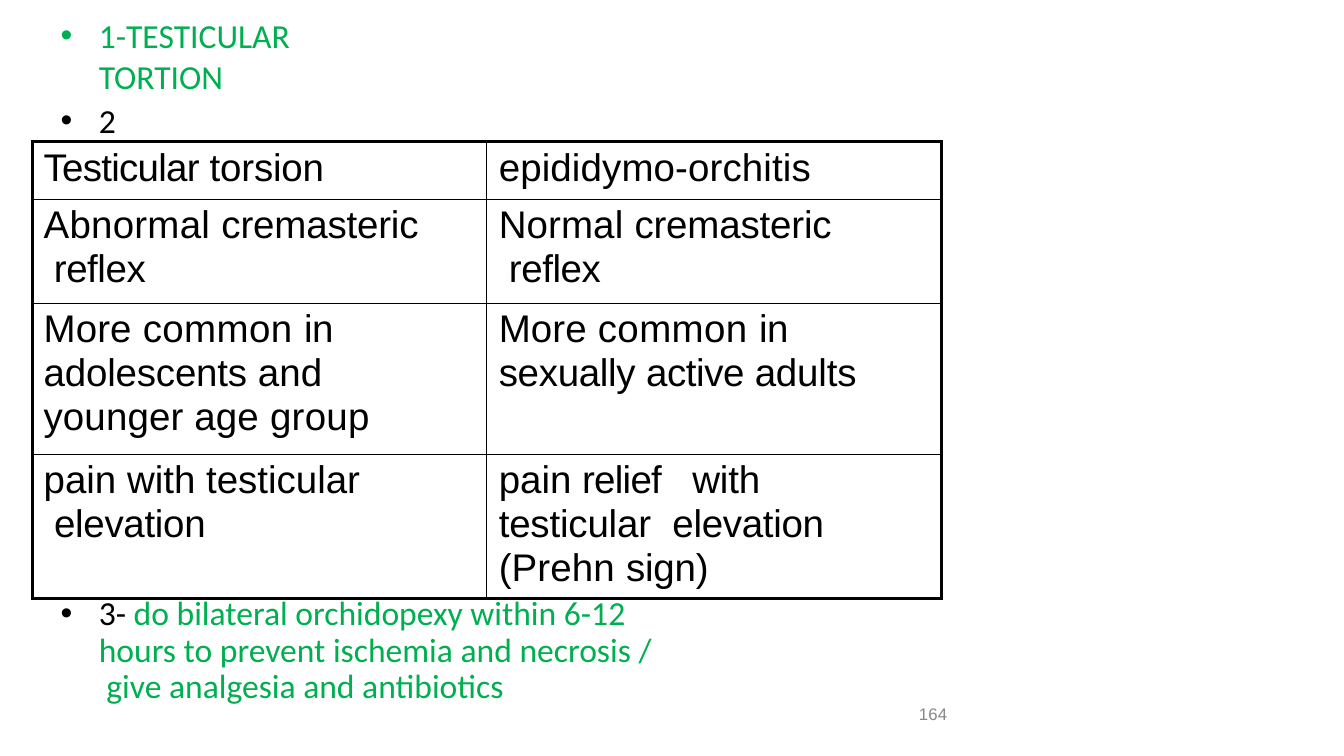
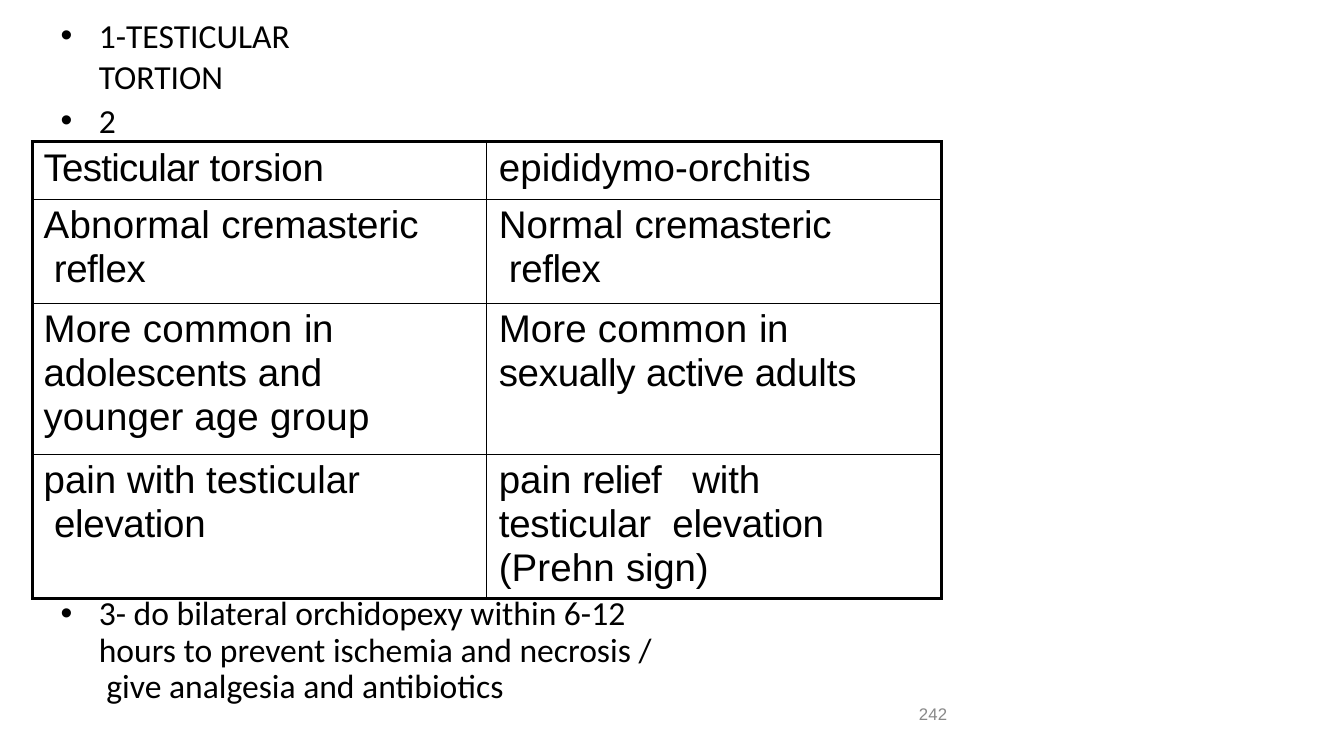
from lxml.etree import SubElement
from pptx import Presentation
from pptx.dml.color import RGBColor
from pptx.enum.text import MSO_ANCHOR, MSO_AUTO_SIZE
from pptx.oxml import parse_xml
from pptx.oxml.ns import nsdecls, qn
from pptx.util import Cm, Pt

BLACK = RGBColor(0x00, 0x00, 0x00)
GREEN = RGBColor(0x00, 0xAF, 0x50)
GRAY = RGBColor(0x88, 0x88, 0x88)
LIST_FONT, TABLE_FONT = "Calibri", "Arial"
TWO_CONTENT_LAYOUT = 3

# Boxes in cm: left, top, width, height
TOP_LIST_BOX = (1.5, 0.25, 8.5, 2.29)
BOTTOM_LIST_BOX = (1.5, 14.91, 15.2, 2.92)
TABLE_BOX = (0.82, 3.57, 22.9, 11.52)
NUMBER_BOX = (23.16, 17.75, 0.9, 0.53)

ROW_HEIGHTS = (1.45, 2.62, 3.81, 3.64)
COLUMN_INDENTS = (0.28, 0.3)
PREHN_TAB = 4.88
OUTER_LINE, INNER_LINE = 2.25, 1

# Each cell is a list of (text, letter spacing in points)
COMPARISON = (
    ([("Testicular ", -0.5), ("torsion", -0.1)],
     [("epididymo-orchitis", 0.1)]),
    ([("Abnormal ", 0.2), ("cremasteric\n", -0.1), (" reflex", -0.3)],
     [("Normal ", 0.1), ("cremasteric\n", -0.1), (" reflex", -0.3)]),
    ([("More ", 0.1), ("common ", 0.3), ("in\n", -0.3),
      ("adolescents ", -0.1), ("and\nyounger age ", 0.1), ("group", 0.2)],
     [("More ", 0.1), ("common ", 0.3), ("in\n", -0.4),
      ("sexually ", -0.2), ("active ", -0.3), ("adults", -0.1)]),
    ([("pain with testicular\n", 0), (" elevation", -0.2)],
     [("pain ", 0), ("relief\t", -0.5), ("with\ntesticular", -0.1),
      (" ", 7.5), ("elevation\n", -0.2), ("(Prehn ", 0.1), ("sign)", -0.1)]),
)


def write(paragraph, text, font, size, color, spacing=0):
    """Add text to a paragraph; a newline becomes a line break."""
    for index, line in enumerate(text.split("\n")):
        if index:
            paragraph.add_line_break()
        if line:
            run = paragraph.add_run()
            run.text = line
            run.font.name, run.font.size = font, Pt(size)
            run.font.color.rgb = color
            run._r.get_or_add_rPr().set("spc", str(round(spacing * 100)))


def place(shape, box):
    shape.left, shape.top, shape.width, shape.height = map(Cm, box)


def set_frame(frame, top_margin=0):
    frame.word_wrap = True
    frame.auto_size = MSO_AUTO_SIZE.NONE
    frame.vertical_anchor = MSO_ANCHOR.TOP
    frame.margin_left = frame.margin_right = frame.margin_bottom = 0
    frame.margin_top = Cm(top_margin)


def set_bullet(paragraph):
    properties = paragraph._p.get_or_add_pPr()
    properties.set("marL", str(Cm(0.99)))
    properties.set("indent", str(-Cm(0.96)))
    SubElement(properties, qn("a:buFont"), typeface="Arial")
    SubElement(properties, qn("a:buChar"), char="•")


def set_tab(paragraph, position):
    tabs = SubElement(paragraph._p.get_or_add_pPr(), qn("a:tabLst"))
    SubElement(tabs, qn("a:tab"), pos=str(Cm(position)), algn="l")


def add_list(placeholder, box, items, line_spacing=1.0):
    """Fill a body placeholder; each item is a list of (text, color)."""
    place(placeholder, box)
    frame = placeholder.text_frame
    set_frame(frame, top_margin=0.13)
    for index, item in enumerate(items):
        paragraph = frame.add_paragraph() if index else frame.paragraphs[0]
        set_bullet(paragraph)
        paragraph.space_before = Pt(2.8 if index else 0)
        paragraph.line_spacing = line_spacing
        for text, color in item:
            write(paragraph, text, LIST_FONT, 24, color)


def set_borders(cell, widths):
    """Draw the left, right, top and bottom lines of a cell."""
    properties = cell._tc.get_or_add_tcPr()
    for index, (side, width) in enumerate(zip("LRTB", widths)):
        properties.insert(index, parse_xml(
            f'<a:ln{side} {nsdecls("a")} w="{Pt(width)}"><a:solidFill>'
            f'<a:srgbClr val="{BLACK}"/></a:solidFill></a:ln{side}>'))


def add_comparison(slide, box):
    rows, columns = len(COMPARISON), len(COLUMN_INDENTS)
    table = slide.shapes.add_table(rows, columns, *map(Cm, box)).table
    table.first_row = table.horz_banding = False
    for column in table.columns:
        column.width = Cm(box[2] / columns)
    for r, (row, height) in enumerate(zip(COMPARISON, ROW_HEIGHTS)):
        table.rows[r].height = Cm(height)
        for c, parts in enumerate(row):
            cell = table.cell(r, c)
            cell.fill.background()
            cell.margin_left = Cm(COLUMN_INDENTS[c])
            cell.margin_right = cell.margin_bottom = 0
            cell.margin_top = Cm(0.1 if r else 0.13)
            edges = (c == 0, c == columns - 1, r == 0, r == rows - 1)
            set_borders(cell, [OUTER_LINE if edge else INNER_LINE
                               for edge in edges])
            paragraph = cell.text_frame.paragraphs[0]
            paragraph.line_spacing = 1.02 if r else 1.0
            if any("\t" in text for text, _ in parts):
                set_tab(paragraph, PREHN_TAB)
            for text, spacing in parts:
                write(paragraph, text, TABLE_FONT, 27.5, BLACK, spacing)


def add_number(slide, box, number):
    text_box = slide.shapes.add_textbox(*map(Cm, box))
    set_frame(text_box.text_frame)
    paragraph = text_box.text_frame.paragraphs[0]
    paragraph.line_spacing = Pt(14.3)
    write(paragraph, number, TABLE_FONT, 12, GRAY, spacing=0.1)


def add_torsion_slide(presentation, number, accent):
    layout = presentation.slide_layouts[TWO_CONTENT_LAYOUT]
    slide = presentation.slides.add_slide(layout)
    title = slide.shapes.title._element
    title.getparent().remove(title)
    add_number(slide, NUMBER_BOX, number)
    add_list(slide.placeholders[1], TOP_LIST_BOX,
             [[("1-TESTICULAR TORTION", accent)], [("2", BLACK)]])
    add_list(slide.placeholders[2], BOTTOM_LIST_BOX,
             [[("3- ", BLACK),
               ("do bilateral orchidopexy within 6-12\n"
                "hours to prevent ischemia and necrosis /\n"
                " give analgesia and antibiotics", accent)]],
             line_spacing=0.9)
    add_comparison(slide, TABLE_BOX)


def main():
    presentation = Presentation()
    presentation.slide_width, presentation.slide_height = Cm(33.87), Cm(19.05)
    for number, accent in (("164", GREEN), ("242", BLACK)):
        add_torsion_slide(presentation, number, accent)
    presentation.save("out.pptx")


if __name__ == "__main__":
    main()
